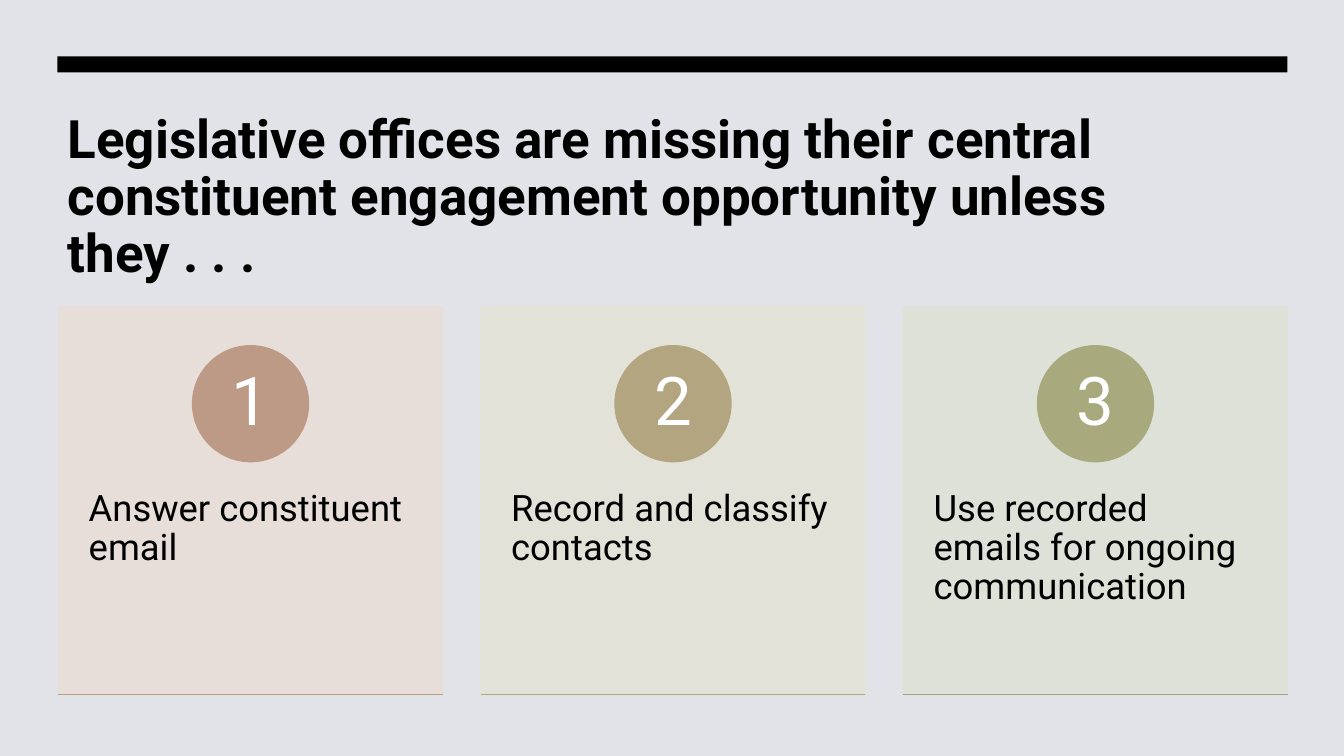
from typing import NamedTuple

from pptx import Presentation
from pptx import util as u
from pptx.dml.color import RGBColor
from pptx.enum import shapes, text
from pptx.oxml.ns import qn
from lxml import etree

PX = u.Inches(1) // 100
FONT = "Roboto"
BACKDROP = RGBColor(0xE2, 0xE3, 0xE8)
BLACK = RGBColor(0x00, 0x00, 0x00)
WHITE = RGBColor(0xFF, 0xFF, 0xFF)

BAND_LEFT, BAND_WIDTH = 57, 1220
CARD_LEFT, CARD_TOP, CARD_WIDTH, CARD_HEIGHT = 58, 304, 381, 385
CARD_STEP = 419
CIRCLE_TOP, CIRCLE_SIZE = 343, 115
NUMBER_INSET = 17
CARD_OPACITY = 90


class Card(NamedTuple):
    caption: str
    panel: RGBColor
    circle: RGBColor
    base: RGBColor


CARDS = [
    Card("Answer constituent email", RGBColor(0xE8, 0xDE, 0xD9),
         RGBColor(0xBD, 0x9A, 0x85), RGBColor(0xB8, 0xA0, 0x83)),
    Card("Record and classify contacts", RGBColor(0xE4, 0xE2, 0xD8),
         RGBColor(0xB4, 0xA5, 0x81), RGBColor(0xAF, 0xAA, 0x80)),
    Card("Use recorded emails for ongoing communication", RGBColor(0xDE, 0xE1, 0xD7),
         RGBColor(0xA8, 0xAA, 0x7E), RGBColor(0x9C, 0xA5, 0x7D)),
]


def place(left: int, top: int, width: int, height: int) -> list[int]:
    return [value * PX for value in (left, top, width, height)]


def add_solid(parent, kind, area: list[int], color: RGBColor, opacity: int = 100):
    """Add a plain shape whose fill and outline share one colour."""
    shape = parent.add_shape(kind, *area)
    shape.shadow.inherit = False
    shape.fill.solid()
    shape.fill.fore_color.rgb = color
    shape.line.color.rgb = color
    shape.line.width = u.Pt(1)
    if opacity < 100:
        for tint in shape._element.spPr.iter(qn("a:srgbClr")):
            etree.SubElement(tint, qn("a:alpha"), val=str(opacity * 1000))
    return shape


def write(frame, words: str, size: float, color: RGBColor, bold: bool = False,
          align=text.PP_ALIGN.LEFT, anchor=text.MSO_ANCHOR.TOP,
          side: int = 10, edge: int = 5) -> None:
    frame.word_wrap = True
    frame.auto_size = text.MSO_AUTO_SIZE.NONE
    frame.vertical_anchor = anchor
    frame.margin_left = frame.margin_right = side * PX
    frame.margin_top = frame.margin_bottom = edge * PX
    para = frame.paragraphs[0]
    para.alignment = align
    para.line_spacing = 0.9
    span = para.add_run()
    span.text = words
    span.font.name = FONT
    span.font.size = u.Pt(size)
    span.font.bold = bold
    span.font.color.rgb = color


def add_base_line(parent, left: int, color: RGBColor) -> None:
    bottom = (CARD_TOP + CARD_HEIGHT) * PX
    line = parent.add_connector(shapes.MSO_CONNECTOR.STRAIGHT, left * PX, bottom,
                                (left + CARD_WIDTH) * PX, bottom)
    line.line.color.rgb = color
    line.line.width = u.Pt(1)
    etree.SubElement(line._element.spPr, qn("a:effectLst"))


def add_card(parent, number: int, card: Card) -> None:
    left = CARD_LEFT + (number - 1) * CARD_STEP
    add_solid(parent, shapes.MSO_SHAPE.RECTANGLE,
              place(left, CARD_TOP, CARD_WIDTH, CARD_HEIGHT), card.panel, CARD_OPACITY)
    caption = parent.add_textbox(*place(left, 450, CARD_WIDTH, 231))
    write(caption.text_frame, card.caption, 26, BLACK, side=30, edge=36)

    circle_left = left + (CARD_WIDTH - CIRCLE_SIZE) // 2
    add_solid(parent, shapes.MSO_SHAPE.OVAL,
              place(circle_left, CIRCLE_TOP, CIRCLE_SIZE, CIRCLE_SIZE), card.circle)
    number_size = CIRCLE_SIZE - 2 * NUMBER_INSET
    number_box = parent.add_textbox(*place(
        circle_left + NUMBER_INSET, CIRCLE_TOP + NUMBER_INSET, number_size, number_size))
    write(number_box.text_frame, str(number), 48, WHITE, align=text.PP_ALIGN.CENTER,
          anchor=text.MSO_ANCHOR.MIDDLE, side=9, edge=1)
    add_base_line(parent, left, card.base)


def main() -> None:
    deck = Presentation()
    deck.slide_width, deck.slide_height = u.Inches(13.33), u.Inches(7.5)
    page = deck.slides.add_slide(deck.slide_layouts[5])
    page.background.fill.solid()
    page.background.fill.fore_color.rgb = BACKDROP

    title = page.shapes.title
    title.left, title.top, title.width, title.height = place(BAND_LEFT, 107, BAND_WIDTH, 179)
    write(title.text_frame, "Legislative offices are missing their central constituent "
          "engagement opportunity unless they . . .", 37.8, BLACK, bold=True,
          anchor=text.MSO_ANCHOR.MIDDLE)

    band = add_solid(page.shapes, shapes.MSO_SHAPE.RECTANGLE,
                     place(BAND_LEFT, 56, BAND_WIDTH, 16), BLACK)
    band.line.fill.background()

    cards = page.shapes.add_group_shape()
    for number, card in enumerate(CARDS, start=1):
        add_card(cards.shapes, number, card)

    deck.save("out.pptx")


if __name__ == "__main__":
    main()
